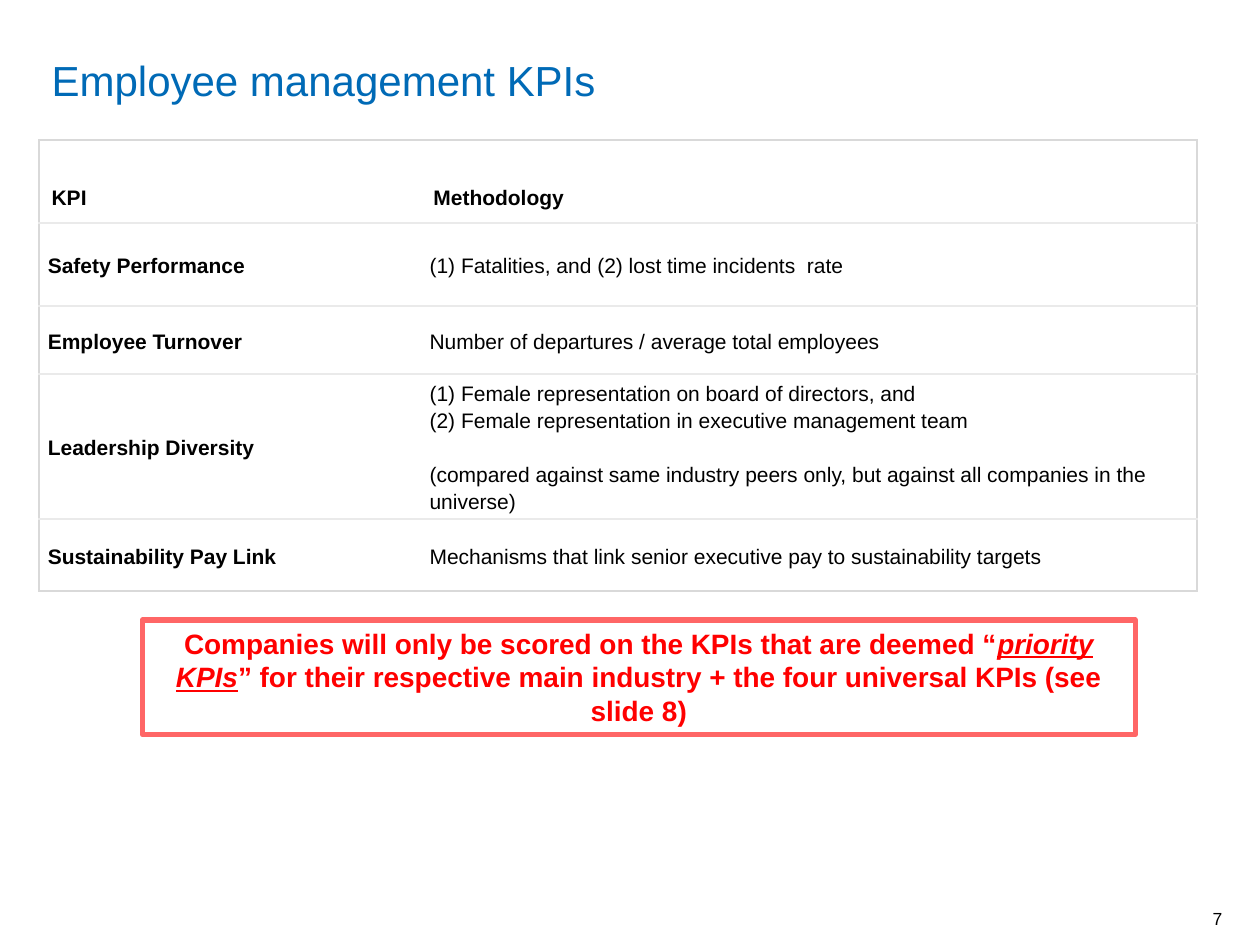
from lxml.etree import SubElement
from pptx import Presentation
from pptx.dml.color import RGBColor
from pptx.enum.shapes import MSO_SHAPE
from pptx.enum.text import MSO_ANCHOR, PP_ALIGN
from pptx.oxml.ns import qn
from pptx.util import Inches, Pt

BLACK = RGBColor(0x00, 0x00, 0x00)
BLUE = RGBColor(0x00, 0x6A, 0xB6)
RED = RGBColor(0xFF, 0x00, 0x00)
CORAL = RGBColor(0xFF, 0x66, 0x66)
OUTER_GRAY = RGBColor(0xD9, 0xD9, 0xD9)
INNER_GRAY = RGBColor(0xEA, 0xEA, 0xEA)
FONT = "Arial"

TITLE = "Employee management KPIs"
PAGE_NUMBER = "7"
HEADER = ("KPI", ["Methodology"])
KPIS = [
    ("Safety Performance", ["(1) Fatalities, and (2) lost time incidents  rate"]),
    ("Employee Turnover", ["Number of departures / average total employees"]),
    ("Leadership Diversity", [
        "Female representation on board of directors, and",
        "Female representation in executive management team",
        "(compared against same industry peers only, but against all companies in the universe)",
    ]),
    ("Sustainability Pay Link",
     ["Mechanisms that link senior executive pay to sustainability targets"]),
]
NUMBERED = KPIS[2][1][:2]
NOTE = KPIS[2][1][2]
CALLOUT = [
    ("Companies will only be scored on the KPIs that are deemed “", False),
    ("priority KPIs", True),
    ("” for their respective main industry + the four universal KPIs (see slide 8)", False),
]
COLUMN_WIDTHS = [3.03, 6.16]
ROW_HEIGHTS = [0.66, 0.66, 0.54, 1.15, 0.57]


def style(paragraph, size, color, bold=False):
    for run in paragraph.runs:
        run.font.name = FONT
        run.font.size = Pt(size)
        run.font.bold = bold
        run.font.color.rgb = color


def number(paragraph):
    properties = paragraph._p.get_or_add_pPr()
    properties.set("marL", str(Inches(0.25)))
    properties.set("indent", str(-Inches(0.25)))
    SubElement(properties, qn("a:buFont"), typeface=FONT)
    SubElement(properties, qn("a:buAutoNum"), type="arabicParenBoth")


def set_borders(cell, borders):
    properties = cell._tc.get_or_add_tcPr()
    for side in "LRTB":
        line = SubElement(properties, qn(f"a:ln{side}"), w=str(Pt(1)))
        color = borders.get(side)
        if color is None:
            SubElement(line, qn("a:noFill"))
        else:
            fill = SubElement(line, qn("a:solidFill"))
            SubElement(fill, qn("a:srgbClr"), val=str(color))


def fill_cell(cell, lines, is_header, bold, vertical_margin):
    cell.fill.background()
    cell.vertical_anchor = MSO_ANCHOR.BOTTOM if is_header else MSO_ANCHOR.MIDDLE
    cell.margin_left = cell.margin_right = Inches(0.1 if is_header else 0.07)
    cell.margin_top = cell.margin_bottom = Inches(vertical_margin)
    cell.text_frame.text = "\n".join(lines)
    for paragraph in cell.text_frame.paragraphs:
        if not is_header:
            paragraph.line_spacing = 1.15
        if paragraph.text in NUMBERED:
            number(paragraph)
        elif paragraph.text == NOTE:
            paragraph.space_before = Pt(15.5)
        style(paragraph, 12, BLACK, bold)


def add_kpi_table(slide):
    rows = [HEADER] + KPIS
    frame = slide.shapes.add_table(
        len(rows), len(COLUMN_WIDTHS), Inches(0.31), Inches(1.11),
        Inches(sum(COLUMN_WIDTHS)), Inches(sum(ROW_HEIGHTS)))
    table = frame.table
    table.first_row = table.horz_banding = False
    for column, width in zip(table.columns, COLUMN_WIDTHS):
        column.width = Inches(width)
    last = len(rows) - 1
    for index, (name, methodology) in enumerate(rows):
        table.rows[index].height = Inches(ROW_HEIGHTS[index])
        is_header = index == 0
        horizontal = {
            "T": OUTER_GRAY if is_header else INNER_GRAY,
            "B": OUTER_GRAY if index == last else INNER_GRAY,
        }
        margin = 0.1 if is_header else 0.05
        method_margin = 0 if index >= last - 1 else margin
        name_cell, method_cell = table.cell(index, 0), table.cell(index, 1)
        set_borders(name_cell, {"L": OUTER_GRAY, **horizontal})
        set_borders(method_cell, {"R": OUTER_GRAY, **horizontal})
        fill_cell(name_cell, [name], is_header, True, margin)
        fill_cell(method_cell, methodology, is_header, is_header, method_margin)


def add_title(slide):
    title = slide.shapes.title
    title.left, title.top = Inches(0.31), Inches(0.38)
    title.width, title.height = Inches(8.23), Inches(0.9)
    title.text_frame.text = TITLE
    title.text_frame.vertical_anchor = MSO_ANCHOR.TOP
    paragraph = title.text_frame.paragraphs[0]
    paragraph.alignment = PP_ALIGN.LEFT
    style(paragraph, 24, BLUE)


def add_callout(slide):
    box = slide.shapes.add_shape(
        MSO_SHAPE.RECTANGLE, Inches(1.13), Inches(4.92), Inches(7.88), Inches(0.91))
    box.shadow.inherit = False
    box.fill.background()
    box.line.color.rgb = CORAL
    box.line.width = Pt(3)
    box.text_frame.word_wrap = True
    box.text_frame.vertical_anchor = MSO_ANCHOR.TOP
    paragraph = box.text_frame.paragraphs[0]
    paragraph.alignment = PP_ALIGN.CENTER
    for text, emphasized in CALLOUT:
        run = paragraph.add_run()
        run.text = text
        run.font.italic = run.font.underline = emphasized
    style(paragraph, 16, RED, True)


def add_page_number(slide):
    box = slide.shapes.add_textbox(Inches(8.93), Inches(7.17), Inches(0.77), Inches(0.2))
    frame = box.text_frame
    frame.word_wrap = True
    frame.vertical_anchor = MSO_ANCHOR.BOTTOM
    frame.margin_left = frame.margin_right = frame.margin_top = frame.margin_bottom = 0
    frame.text = PAGE_NUMBER
    frame.paragraphs[0].alignment = PP_ALIGN.RIGHT
    style(frame.paragraphs[0], 10, BLACK)


def main():
    presentation = Presentation()
    presentation.slide_width, presentation.slide_height = Inches(10), Inches(7.5)
    slide = presentation.slides.add_slide(presentation.slide_layouts[5])
    add_title(slide)
    add_kpi_table(slide)
    add_callout(slide)
    add_page_number(slide)
    presentation.save("out.pptx")


if __name__ == "__main__":
    main()
